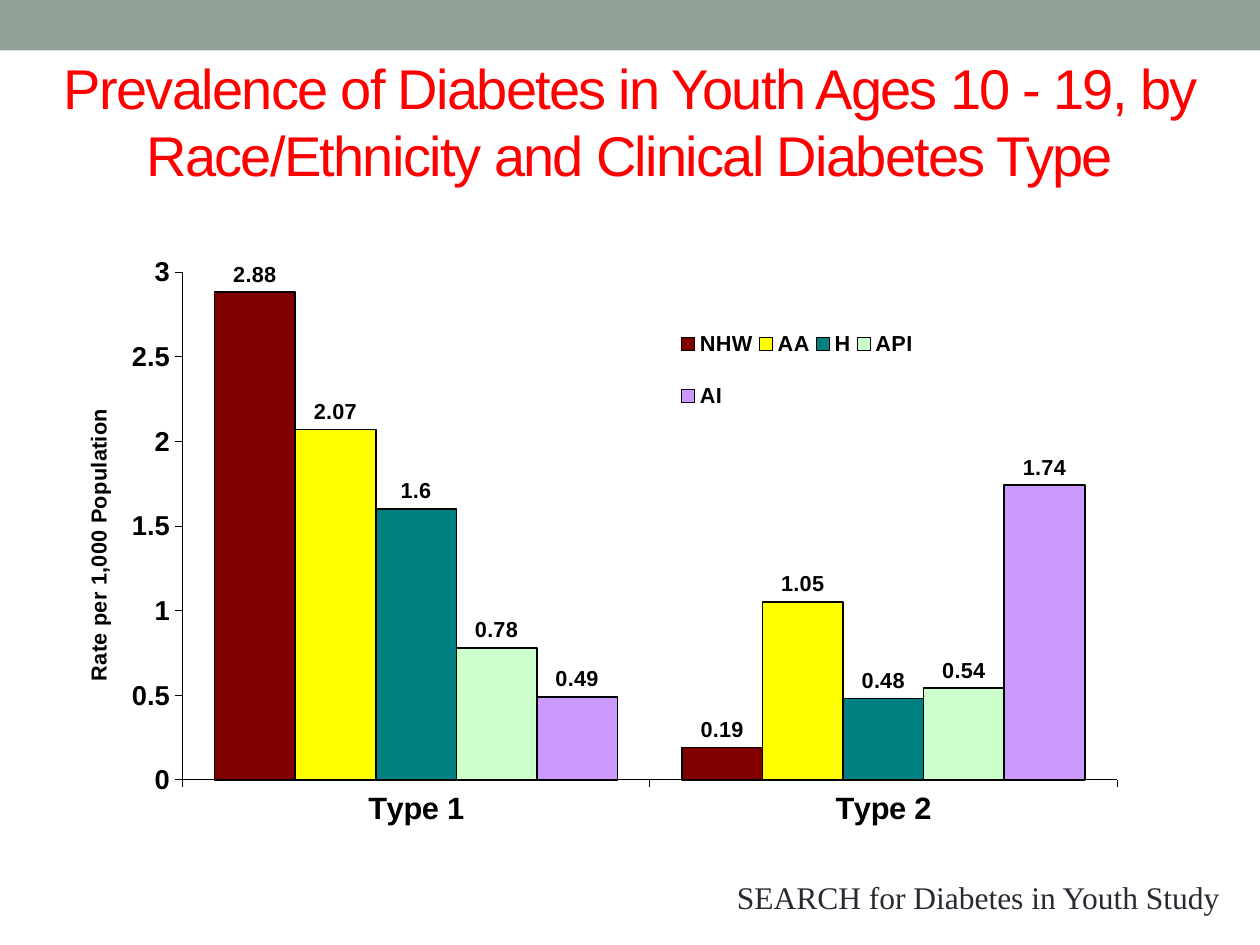
from lxml import etree
from pptx import Presentation
from pptx import util as u
from pptx.chart import data as cd
from pptx.dml.color import RGBColor
from pptx.enum import chart as ce, shapes, text
from pptx.oxml import ns

Pt = u.Pt
HUE = {"band": "93A299", "title": "FF0000", "ink": "000000", "note": "292934",
       "NHW": "800000", "AA": "FFFF00", "H": "008080", "API": "CCFFCC", "AI": "CC99FF"}
TITLE = "Prevalence of Diabetes in Youth Ages 10 - 19, by Race/Ethnicity and Clinical Diabetes Type"
NOTE = "SEARCH for Diabetes in Youth Study"
UNIT = "Rate per 1,000 Population"
CATS = ["Type 1", "Type 2"]
RATES = {"NHW": (2.88, 0.19), "AA": (2.07, 1.05), "H": (1.6, 0.48),
         "API": (0.78, 0.54), "AI": (0.49, 1.74)}
BOX = {"band": (0, 0, 720, 28.8), "title": (0, 12.24, 720, 113),
       "chart": (33.84, 141.84, 634.3, 357.8), "note": (414, 498.24, 293, 28.8)}
# Shares of the chart area
PLOT = {"x": 0.111, "y": 0.038, "w": 0.842, "h": 0.811}
KEY = {"x": 0.555, "y": 0.09, "w": 0.22, "h": 0.21}
SIDE = {"x": 0.019, "y": 0.25}


def rgb(name):
    return RGBColor.from_string(HUE[name])


def style(font, size, hue="ink", face="Arial", bold=False):
    font.size, font.name, font.bold = Pt(size), face, bold
    font.color.rgb = rgb(hue)


def write(frame, words, size, align=text.PP_ALIGN.LEFT, gap=0, **form):
    """Fill a text frame; gap is the letter spacing in points."""
    par = frame.paragraphs[0]
    par.alignment = align
    run = par.add_run()
    run.text = words
    style(run.font, size, **form)
    if gap:
        run._r.get_or_add_rPr().set("spc", str(gap * 100))


def stroke(line, width):
    line.color.rgb = rgb("ink")
    line.width = Pt(width)


def place(host, after, area, inner=False):
    """Give a chart part a manual layout, put behind its child named after."""
    for old in host.findall(ns.qn("c:layout")):
        host.remove(old)
    lay = etree.Element(ns.qn("c:layout"))
    man = etree.SubElement(lay, ns.qn("c:manualLayout"))
    pairs = [("layoutTarget", "inner")] if inner else []
    pairs += [(k + "Mode", "edge") for k in "xy"] + list(area.items())
    for tag, val in pairs:
        etree.SubElement(man, ns.qn("c:" + tag)).set("val", str(val))
    if after:
        host.find(ns.qn(after)).addnext(lay)
    else:
        host.insert(0, lay)


def draw(slide):
    data = cd.CategoryChartData()
    data.categories = CATS
    for name, vals in RATES.items():
        data.add_series(name, vals)
    chart = slide.shapes.add_chart(ce.XL_CHART_TYPE.COLUMN_CLUSTERED,
                                   *map(Pt, BOX["chart"]), data).chart
    style(chart.font, 12.4, bold=True)
    chart.has_title = False
    plot = chart.plots[0]
    plot.gap_width, plot.overlap, plot.vary_by_categories = 80, 0, False
    for bar in plot.series:
        bar.format.fill.solid()
        bar.format.fill.fore_color.rgb = rgb(bar.name)
        stroke(bar.format.line, 0.97)
        tags = bar.data_labels
        tags.show_value = True
        tags.position = ce.XL_LABEL_POSITION.OUTSIDE_END
        style(tags.font, 12.4, bold=True)

    cat, val = chart.category_axis, chart.value_axis
    for axis, size in ((cat, 17.6), (val, 15.6)):
        axis.has_major_gridlines = False
        axis.major_tick_mark = ce.XL_TICK_MARK.OUTSIDE
        style(axis.tick_labels.font, size, bold=True)
        stroke(axis.format.line, 0.25)
    val.minimum_scale, val.maximum_scale, val.major_unit = 0, 3, 0.5
    name = val.axis_title
    write(name.text_frame, UNIT, 12.4, text.PP_ALIGN.CENTER, bold=True)
    place(name._element, "c:tx", SIDE)

    chart.has_legend = True
    key = chart.legend
    key.position = ce.XL_LEGEND_POSITION.RIGHT
    key.include_in_layout = False
    style(key.font, 12.4, bold=True)
    place(key._element, "c:legendPos", KEY)
    area = chart._chartSpace.find(".//" + ns.qn("c:plotArea"))
    place(area, None, PLOT, inner=True)


def main():
    deck = Presentation()
    deck.slide_width, deck.slide_height = Pt(720), Pt(540)
    slide = deck.slides.add_slide(deck.slide_layouts[5])

    band = slide.shapes.add_shape(shapes.MSO_SHAPE.RECTANGLE, *map(Pt, BOX["band"]))
    band.shadow.inherit = False
    band.fill.solid()
    band.fill.fore_color.rgb = rgb("band")
    band.line.fill.background()
    band._element.getparent().insert(2, band._element)

    title = slide.shapes.title
    title.left, title.top, title.width, title.height = map(Pt, BOX["title"])
    frame = title.text_frame
    frame.word_wrap, frame.auto_size = True, text.MSO_AUTO_SIZE.NONE
    frame.vertical_anchor = text.MSO_ANCHOR.MIDDLE
    frame.margin_left = frame.margin_right = Pt(5)
    frame.margin_top = frame.margin_bottom = Pt(3)
    write(frame, TITLE, 32, text.PP_ALIGN.CENTER, gap=-1, hue="title")

    draw(slide)

    note = slide.shapes.add_textbox(*map(Pt, BOX["note"])).text_frame
    note.word_wrap, note.auto_size = False, text.MSO_AUTO_SIZE.SHAPE_TO_FIT_TEXT
    write(note, NOTE, 18, hue="note", face="Times New Roman")
    deck.save("out.pptx")


if __name__ == "__main__":
    main()
